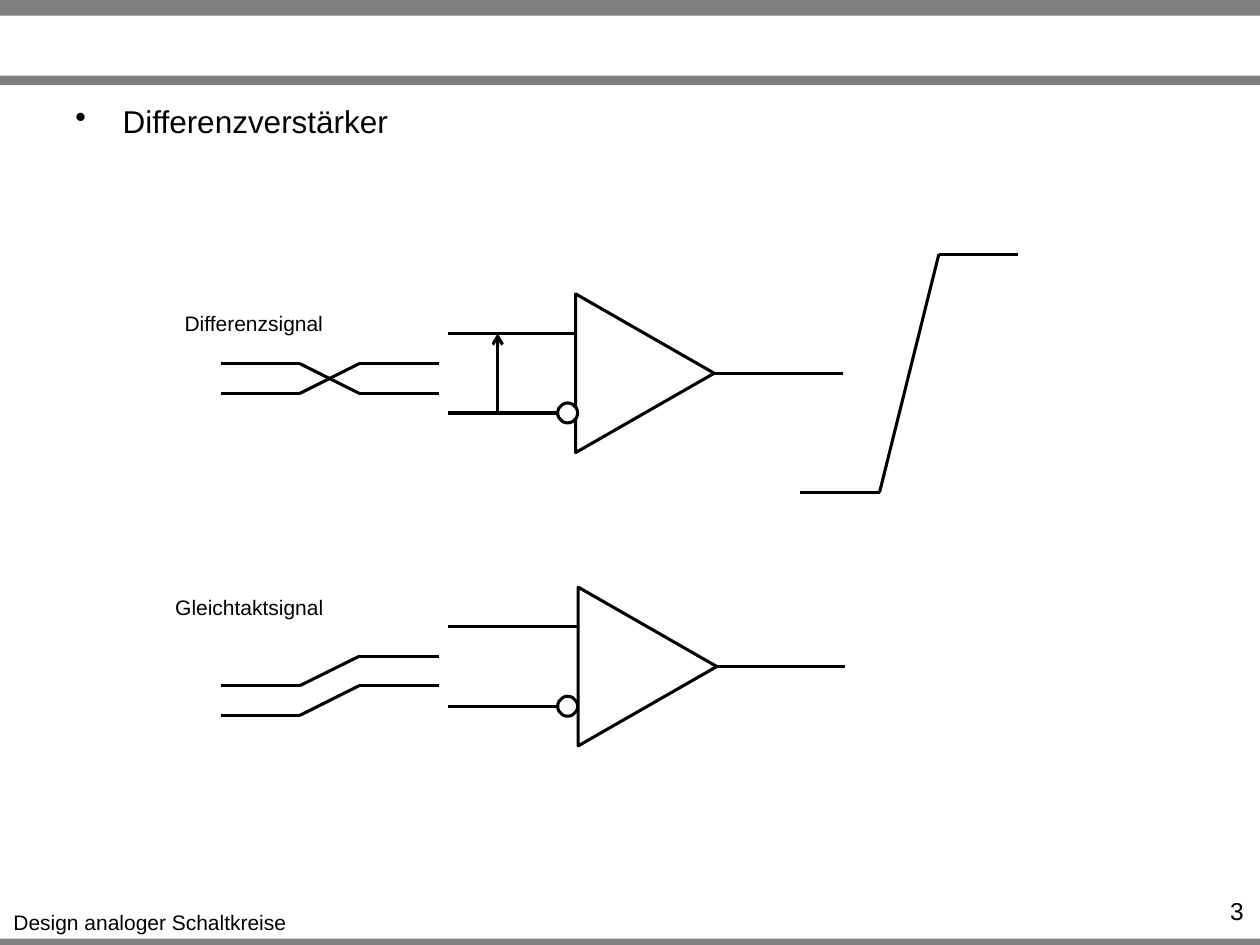
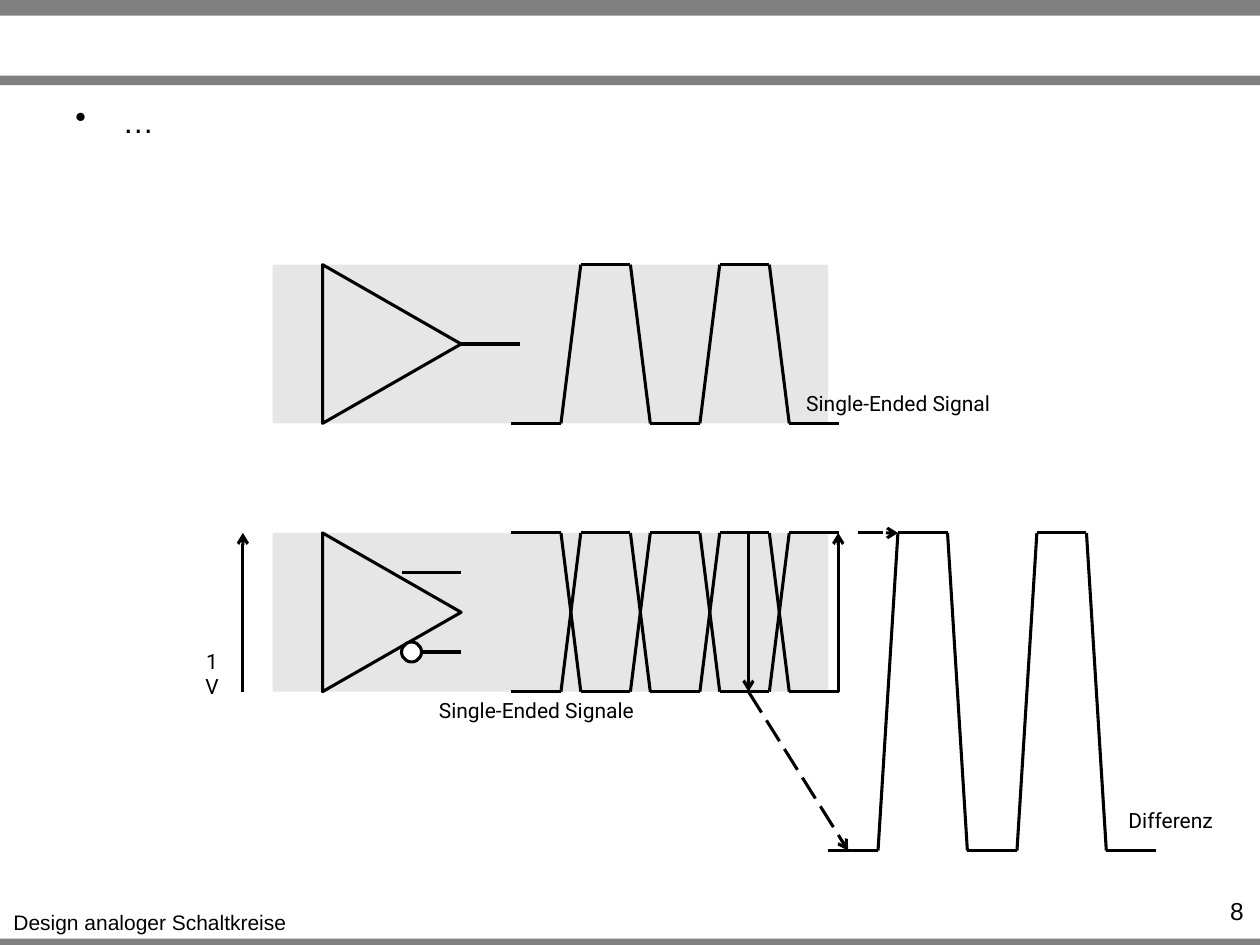
from itertools import pairwise
from pptx import Presentation
from pptx.dml.color import RGBColor
from pptx.enum.dml import MSO_LINE
from pptx.enum.shapes import MSO_CONNECTOR, MSO_SHAPE
from pptx.enum.text import PP_ALIGN
from pptx.oxml.ns import qn
from pptx.util import Pt
from lxml import etree

LEFT, MID, RIGHT = PP_ALIGN.LEFT, PP_ALIGN.CENTER, PP_ALIGN.RIGHT
RECT, OVAL, TRI = MSO_SHAPE.RECTANGLE, MSO_SHAPE.OVAL, MSO_SHAPE.ISOSCELES_TRIANGLE
STRAIGHT, DASH = MSO_CONNECTOR.STRAIGHT, MSO_LINE.LONG_DASH
color = RGBColor.from_string
BLACK, WHITE, BAND, PALE = "000000", "FFFFFF", "808080", "E6E6E6"
THICK = Pt(1.75)


def draw(slide, points, arrow=False, dash=None):
    """Join the points with straight lines."""
    for (x1, y1), (x2, y2) in pairwise(points):
        line = slide.shapes.add_connector(STRAIGHT, Pt(x1), Pt(y1), Pt(x2), Pt(y2))
        line.line.color.rgb = color(BLACK)
        line.line.width = THICK
        if dash:
            line.line.dash_style = dash
        props = line._element.spPr
        if arrow:
            etree.SubElement(props.find(qn("a:ln")), qn("a:tailEnd"), type="arrow")
        etree.SubElement(props, qn("a:effectLst"))


def write(slide, text, box, size=12, font="Arial", align=MID, wrap=False, bullet=False):
    frame = slide.shapes.add_textbox(*map(Pt, box)).text_frame
    frame.word_wrap = wrap
    para = frame.paragraphs[0]
    para.text = text
    para.alignment = align
    if bullet:
        props = para._p.get_or_add_pPr()
        props.set("marL", str(Pt(27)))
        props.set("indent", str(-Pt(27)))
        etree.SubElement(props, qn("a:buChar"), char="•")
    para.font.size = Pt(size)
    para.font.name = font
    para.font.color.rgb = color(BLACK)


deck = Presentation()
deck.slide_width, deck.slide_height = Pt(720), Pt(540)

# Bands, footer, page number and bullet line
slides = []
for topic, page in (("Differenzverstärker", "3"), ("…", "8")):
    slide = deck.slides.add_slide(deck.slide_layouts[6])
    slides.append(slide)
    for top, height in ((536.4, 5.6), (0, 9), (43.2, 5.5)):
        band = slide.shapes.add_shape(RECT, 0, Pt(top), Pt(720), Pt(height))
        band.shadow.inherit = False
        band.fill.solid()
        band.fill.fore_color.rgb = color(BAND)
        band.line.fill.background()
    write(slide, "Design analoger Schaltkreise", (0, 516.2, 171.4, 21.6))
    write(slide, topic, (36, 54.7, 648, 89.3), 18, align=LEFT, wrap=True, bullet=True)
    write(slide, page, (655.2, 508.3, 62.6, 17.3), 14, align=RIGHT, wrap=True)
first, second = slides

# Sizes of the amplifiers and their terminals
LONG, HIGH, DOT, PORT = 79.2, 90.7, 11.4, 22.7
HALF = HIGH / 2

# Pale signal ranges behind the amplifiers
single, double = 196.6, 349.9
for mid in (single, double):
    field = second.shapes.add_shape(RECT, Pt(155.8), Pt(mid - HALF), Pt(317.4), Pt(HIGH))
    field.shadow.inherit = False
    field.fill.solid()
    field.fill.fore_color.rgb = color(PALE)
    field.line.fill.background()

# Amplifiers, given by left edge and middle
upper, lower = 213.3, 380.9
gates = ((first, 328.9, upper), (first, 330.4, lower),
         (second, 184.3, single), (second, 184.3, double))
for slide, left, mid in gates:
    gate = slide.shapes.add_shape(TRI, Pt(left + (LONG - HIGH) / 2), Pt(mid - LONG / 2),
                                  Pt(HIGH), Pt(LONG))
    gate.rotation = 90
    gate.shadow.inherit = False
    gate.fill.background()
    gate.line.color.rgb = color(BLACK)
    gate.line.width = THICK

# Terminals of the amplifiers
for slide, left, mid in gates[:2]:
    for y in (mid - PORT, mid + PORT):
        draw(slide, [(256.3, y), (left, y)])
    draw(slide, [(left + LONG, mid), (left + LONG + 73.4, mid)])
draw(second, [(263.5, single), (297.4, single)])
for y in (double - PORT, double + PORT):
    draw(second, [(229.7, y), (263.5, y)])

# Inverting terminals
for slide, left, mid in ((first, 318.7, upper), (first, 318.7, lower),
                         (second, 229.5, double)):
    dot = slide.shapes.add_shape(OVAL, Pt(left), Pt(mid + PORT - DOT / 2), Pt(DOT), Pt(DOT))
    dot.shadow.inherit = False
    dot.fill.solid()
    dot.fill.fore_color.rgb = color(WHITE)
    dot.line.color.rgb = color(BLACK)
    dot.line.width = THICK

# Signal steps: left end, level before, level after
for left, start, end in ((126, 224.8, 207.8), (126, 207.8, 224.8),
                         (126, 391.8, 375), (126, 408.8, 391.8),
                         (457.2, 281.4, 145.3)):
    draw(first, [(left, start), (left + 45.4, start), (left + 79.3, end), (left + 124.7, end)])
draw(first, [(284.4, upper + PORT), (284.4, upper - PORT)], arrow=True)

# Pulse trains: left end, resting level, pulse level
top, base, deep = double - HALF, double + HALF, 486
for left, rest, pulse in ((292.2, single + HALF, single - HALF), (292.2, base, top),
                          (292.2, top, base), (473.4, deep, top)):
    points, x = [], left
    for level in (rest, pulse, rest, pulse, rest):
        points += [(x, level), (x + 28.35, level)]
        x += 39.7
    draw(second, points)

# Voltage arrows and their projection onto the difference
for x, start, end in ((138.8, base, top), (479, base, top), (427.7, top, base)):
    draw(second, [(x, start), (x, end)], arrow=True)
draw(second, [(490.3, top), (513.2, top)], arrow=True, dash=DASH)
draw(second, [(427.7, base), (484.6, deep)], arrow=True, dash=DASH)

# Labels
write(first, "Differenzsignal", (97.9, 174.2, 94.3, 21.6))
write(first, "Gleichtaktsignal", (92.5, 336.4, 100, 21.6))
for text, left, y, width in (("Single-Ended Signale", 243.2, 395.3, 126.7),
                             ("Differenz", 637.7, 457.7, 62.6),
                             ("Single-Ended Signal", 453.2, 219.6, 120.2)):
    write(second, text, (left, y, width, 21.6), font="Roboto")
write(second, "1V", (110.2, 367.2, 22, 21.6), font="Roboto", wrap=True)

deck.save("out.pptx")
